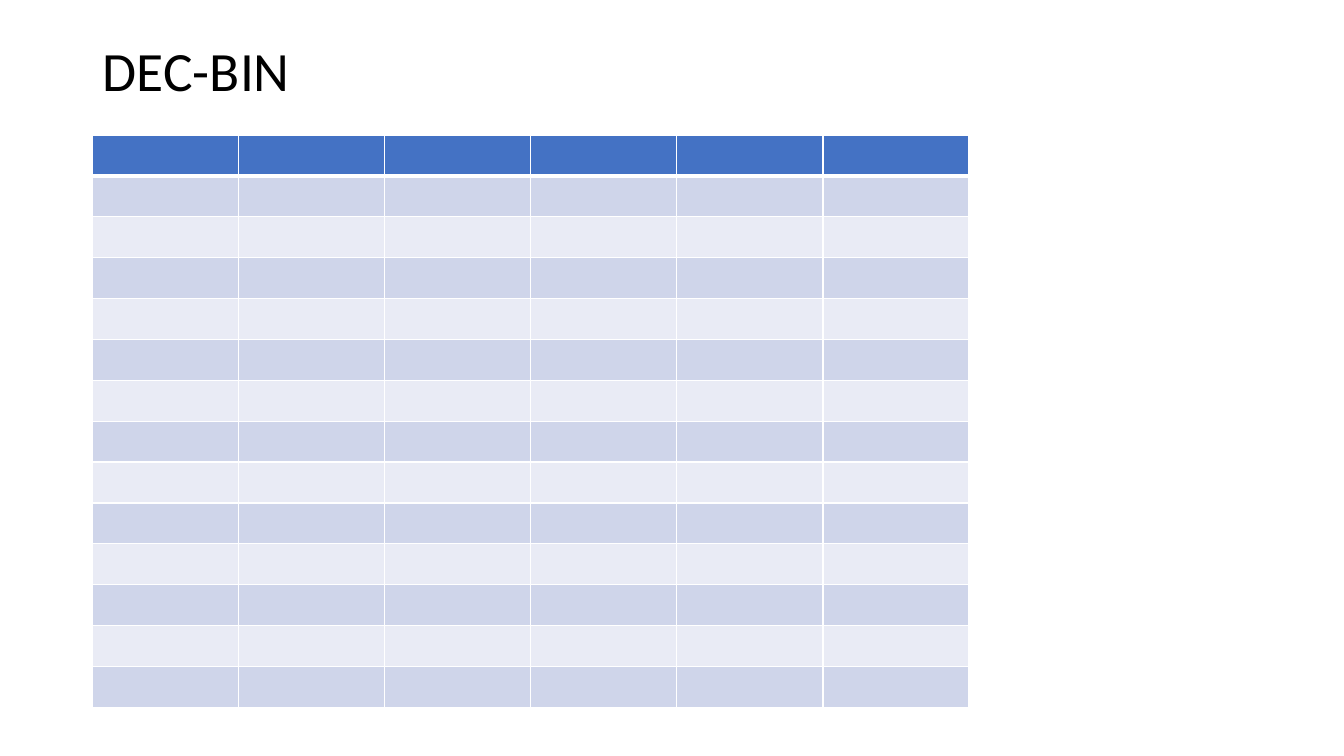
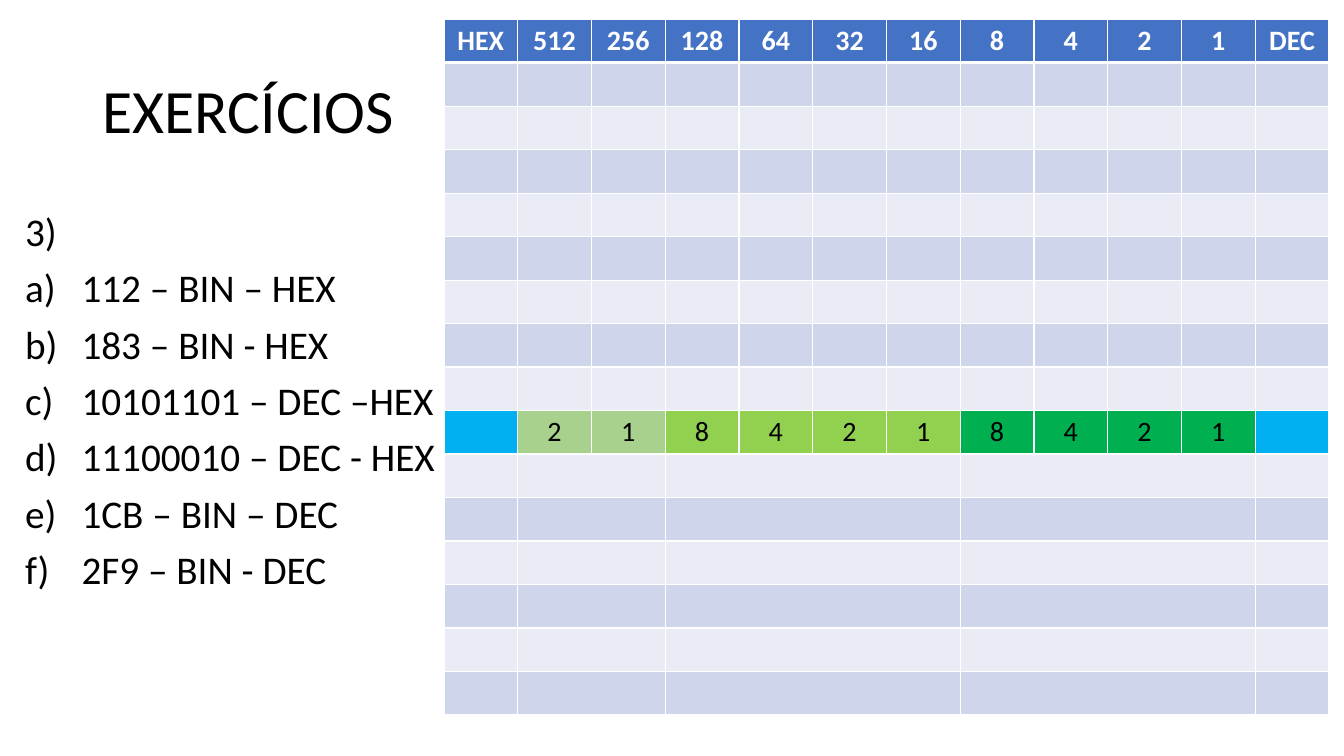
import pptx
import pptx.dml.color
import pptx.enum.text
import pptx.oxml
import pptx.oxml.ns
import pptx.util
from lxml import etree

ALIGN = pptx.enum.text.PP_ALIGN
ANCHOR = pptx.enum.text.MSO_ANCHOR
FONT, BLACK, WHITE = "Calibri", "000000", "FFFFFF"
HEADER, BANDS = "4472C4", ("CFD5EA", "E9EBF5")


def rgb(value):
    return pptx.dml.color.RGBColor.from_string(value)


def add_xml(parent, tag, **attrs):
    return etree.SubElement(parent, pptx.oxml.ns.qn(tag), attrs)


def assign(obj, values):
    for name, value in values.items():
        setattr(obj, name, value)


class Deck:
    def __init__(self):
        self.prs = pptx.Presentation()
        assign(self.prs, {"slide_width": pptx.util.Inches(13.33),
                          "slide_height": pptx.util.Inches(7.5)})

    def area(self, left, top, width, height):
        w, h = self.prs.slide_width, self.prs.slide_height
        shares = zip((left, top, width, height), (w, h, w, h))
        return [round(share * size / 100) for share, size in shares]

    def text(self, p, text, size, color=BLACK, bold=False, **paragraph):
        r = p.add_run()
        r.text = text
        assign(r.font, {"name": FONT, "size": pptx.util.Pt(size), "bold": bold})
        r.font.color.rgb = rgb(color)
        assign(p, paragraph)

    def slide(self, title, size, height):
        self.s = self.prs.slides.add_slide(self.prs.slide_layouts[5])
        sp = self.s.shapes.title
        box = self.area(6.9, 5.33, 86.27, height)
        assign(sp, dict(zip(("left", "top", "width", "height"), box)))
        assign(sp.text_frame, {"word_wrap": True, "vertical_anchor": ANCHOR.MIDDLE,
                               "auto_size": pptx.enum.text.MSO_AUTO_SIZE.NONE})
        self.text(sp.text_frame.paragraphs[0], title, size,
                  alignment=ALIGN.LEFT, line_spacing=0.9)

    def lettered_list(self, heading, items, box):
        tf = self.s.shapes.add_textbox(*self.area(*box)).text_frame
        tf.word_wrap = True
        indent = pptx.util.Inches(0.56)
        for i, item in enumerate([heading, *items]):
            p = tf.add_paragraph() if i else tf.paragraphs[0]
            self.text(p, item, 28, line_spacing=0.9, space_before=pptx.util.Pt(10))
            if i:
                pPr = p._p.get_or_add_pPr()
                pPr.set("marL", str(indent))
                pPr.set("indent", str(-indent))
                add_xml(pPr, "a:buFont", typeface="+mj-lt")
                add_xml(pPr, "a:buAutoNum", type="alphaLcParenR")

    def borders(self, cell, top, bottom):
        tcPr = cell._tc.get_or_add_tcPr()
        for side, width in zip("LRTB", (1, 1, top, bottom)):
            ln = add_xml(tcPr, f"a:ln{side}", w=str(pptx.util.Pt(width)))
            add_xml(add_xml(ln, "a:solidFill"), "a:srgbClr", val=WHITE)

    def table(self, rows, cols, box, texts=None, fills=None):
        texts, fills = texts or {}, fills or {}
        left, top, width, height = self.area(*box)
        table = self.s.shapes.add_table(rows, cols, left, top, width, height).table
        for col in table.columns:
            col.width = round(width / cols)
        margin = pptx.util.Inches(0.04)
        for i, row in enumerate(table.rows):
            row.height = round(height / rows)
            band = BANDS[(i - 1) % 2] if i else HEADER
            for j, cell in enumerate(row.cells):
                assign(cell, {"margin_top": margin, "margin_bottom": margin,
                              "vertical_anchor": ANCHOR.MIDDLE})
                self.borders(cell, 3 if i == 1 else 1, 1 if i else 3)
                cell.fill.solid()
                cell.fill.fore_color.rgb = rgb(fills[i][j] if i in fills else band)
                if i in texts and texts[i][j]:
                    self.text(cell.text_frame.paragraphs[0], texts[i][j], 20,
                              BLACK if i else WHITE, not i, alignment=ALIGN.CENTER)
        return table

    def merge_groups(self, table, first_row, groups):
        for i in range(first_row, len(table.rows)):
            for first, last in groups:
                table.cell(i, first).merge(table.cell(i, last))


def main():
    deck = Deck()
    deck.slide("DEC-BIN", 39.6, 8.8)
    deck.table(14, 6, (6.9, 17.87, 65.2, 75.73))

    deck.slide("EXERCÍCIOS", 44, 19.33)
    deck.lettered_list("3)", [
        "112 – BIN – HEX", "183 – BIN - HEX", "10101101 – DEC –HEX",
        "11100010 – DEC - HEX", "1CB – BIN – DEC", "2F9 – BIN - DEC",
    ], (1.13, 27.47, 33.08, 63.47))
    powers = [str(2 ** n) for n in range(9, -1, -1)]
    nibble = powers[-4:]
    weights = ["", *nibble[-2:], *nibble, *nibble, ""]
    colors = ["00B0F0"] + ["A9D18E"] * 2 + ["92D050"] * 4 + ["00B050"] * 4 + ["00B0F0"]
    table = deck.table(16, 12, (33.03, 2.53, 65.87, 92.13),
                       {0: ["HEX", *powers, "DEC"], 9: weights}, {9: colors})
    deck.merge_groups(table, 10, [(1, 2), (3, 6), (7, 10)])

    deck.prs.save("out.pptx")


if __name__ == "__main__":
    main()
